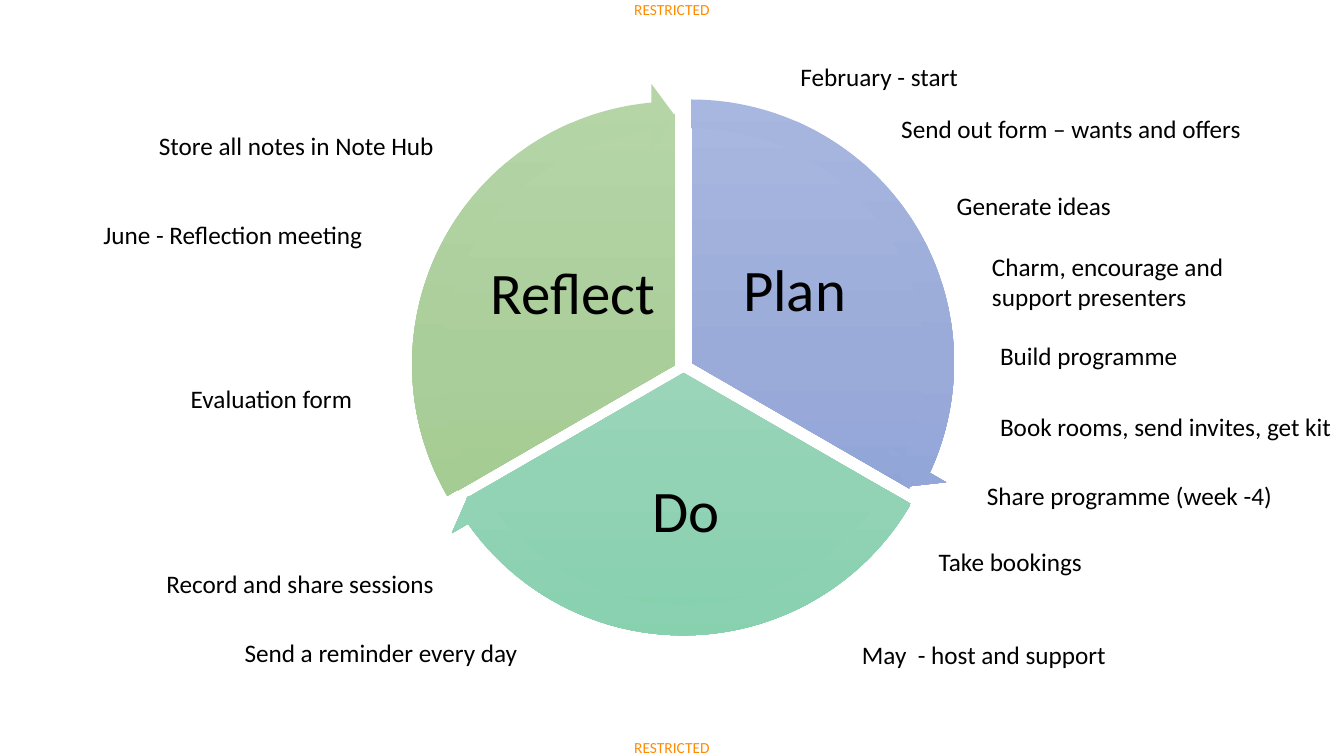
import copy

import pptx
import pptx.dml.color
import pptx.enum.shapes
import pptx.enum.text
import pptx.oxml.ns
import pptx.util

PX = 9144  # one px is a hundredth of an inch
RGB = pptx.dml.color.RGBColor
SHAPES = pptx.enum.shapes.MSO_SHAPE
ALIGN = pptx.enum.text.PP_ALIGN
ANCHOR = pptx.enum.text.MSO_ANCHOR
AUTO = pptx.enum.text.MSO_AUTO_SIZE

BLACK = RGB(0x00, 0x00, 0x00)
ORANGE = RGB(0xFF, 0x8C, 0x00)
BLUES = RGB(0xA8, 0xB7, 0xDF), RGB(0x9A, 0xAB, 0xD9), RGB(0x88, 0x9E, 0xD7)
TEALS = RGB(0xA8, 0xDA, 0xC3), RGB(0x9A, 0xD4, 0xB9), RGB(0x87, 0xD1, 0xAF)
GREENS = RGB(0xB5, 0xD5, 0xA7), RGB(0xAA, 0xCE, 0x9A), RGB(0x9C, 0xC9, 0x87)

deck = pptx.Presentation()
deck.slide_width, deck.slide_height = 1333 * PX, 750 * PX
page = deck.slides.add_slide(deck.slide_layouts[6])


def add_text(text, area, size, color, align, frame_format):
    box = page.shapes.add_textbox(*[length * PX for length in area])
    for name, value in frame_format.items():
        setattr(box.text_frame, name, value)
    para = box.text_frame.paragraphs[0]
    para.alignment = align
    span = para.add_run()
    span.text = text
    font_format = {"name": "Calibri", "size": pptx.util.Pt(size)}
    for name, value in font_format.items():
        setattr(span.font, name, value)
    span.font.color.rgb = color
    return para


def add_wheel_part(kind, left, top, size, adjustments, colors):
    part = page.shapes.add_shape(kind, left * PX, top * PX, size * PX, size * PX)
    part.shadow.inherit = False
    part.line.fill.background()
    for index, value in enumerate(adjustments):
        part.adjustments[index] = value
    part.fill.gradient()
    part.fill.gradient_angle = 270
    # A new gradient has two stops; a third is needed
    stop_list = part._element.spPr.find(".//" + pptx.oxml.ns.qn("a:gsLst"))
    stop_list.append(copy.deepcopy(stop_list[0]))
    for stop, position, color in zip(part.fill.gradient_stops, (0, 0.5, 1), colors):
        stop.position = position
        stop.color.rgb = color


# Markings at the top and bottom edges
marking_format = {"margin_left": 0, "margin_top": 0, "margin_right": 0,
                  "margin_bottom": 0, "word_wrap": False,
                  "auto_size": AUTO.SHAPE_TO_FIT_TEXT}
for top in (0, 732):
    add_text("RESTRICTED", (629, top, 78, 18), 11, ORANGE, ALIGN.LEFT, marking_format)

# Wheel: name, name area, pie left and top, start and end angle, colours
sectors = [
    ("Plan", (699, 216, 178, 148), 437, 111, 162, 18, BLUES),
    ("Do", (547, 444, 267, 130), 429, 121, 18, 90, TEALS),
    ("Reflect", (479, 219, 178, 148), 421, 113, 90, 162, GREENS),
]
sector_format = {"margin_left": 6 * PX, "margin_top": 6 * PX,
                 "margin_right": 6 * PX, "margin_bottom": 6 * PX,
                 "word_wrap": True, "vertical_anchor": ANCHOR.MIDDLE}
for sector, area, left, top, start, end, colors in sectors:
    add_wheel_part(SHAPES.PIE, left, top, 498, (start, end), colors)
    para = add_text(sector, area, 42, BLACK, ALIGN.CENTER, sector_format)
    para.line_spacing = 0.9

# Arrows around the sectors
HEAD_ANGLE = 3.275
for sector, area, left, top, start, end, colors in sectors:
    bends = (0.051, HEAD_ANGLE, end - HEAD_ANGLE, start, 0.059)
    add_wheel_part(SHAPES.CIRCULAR_ARROW, left - 31, top - 31, 559, bends, colors)

# Steps: text, left, top, width, height
right_steps = [
    ("February - start", 784, 56, 458, 40),
    ("Send out form – wants and offers", 884, 108, 458, 40),
    ("Generate ideas", 939, 184, 458, 40),
    ("Charm, encourage and support presenters", 974, 244, 322, 71),
    ("Build programme", 982, 333, 458, 40),
    ("Book rooms, send invites, get kit", 982, 403, 458, 40),
    ("Share programme (week -4)", 969, 472, 458, 40),
    ("Take bookings", 921, 537, 458, 40),
    ("May  - host and support", 845, 629, 458, 40),
]
left_steps = [
    ("Record and share sessions", -18, 559, 458, 40),
    ("Send a reminder every day", 65, 627, 458, 40),
    ("Evaluation form", -99, 375, 458, 40),
    ("June - Reflection meeting", -89, 213, 458, 40),
    ("Store all notes in Note Hub", -18, 124, 458, 40),
]
step_format = {"word_wrap": True, "auto_size": AUTO.SHAPE_TO_FIT_TEXT}
for steps, align in ((right_steps, ALIGN.LEFT), (left_steps, ALIGN.RIGHT)):
    for text, *area in steps:
        add_text(text, area, 18, BLACK, align, step_format)

deck.save("out.pptx")
